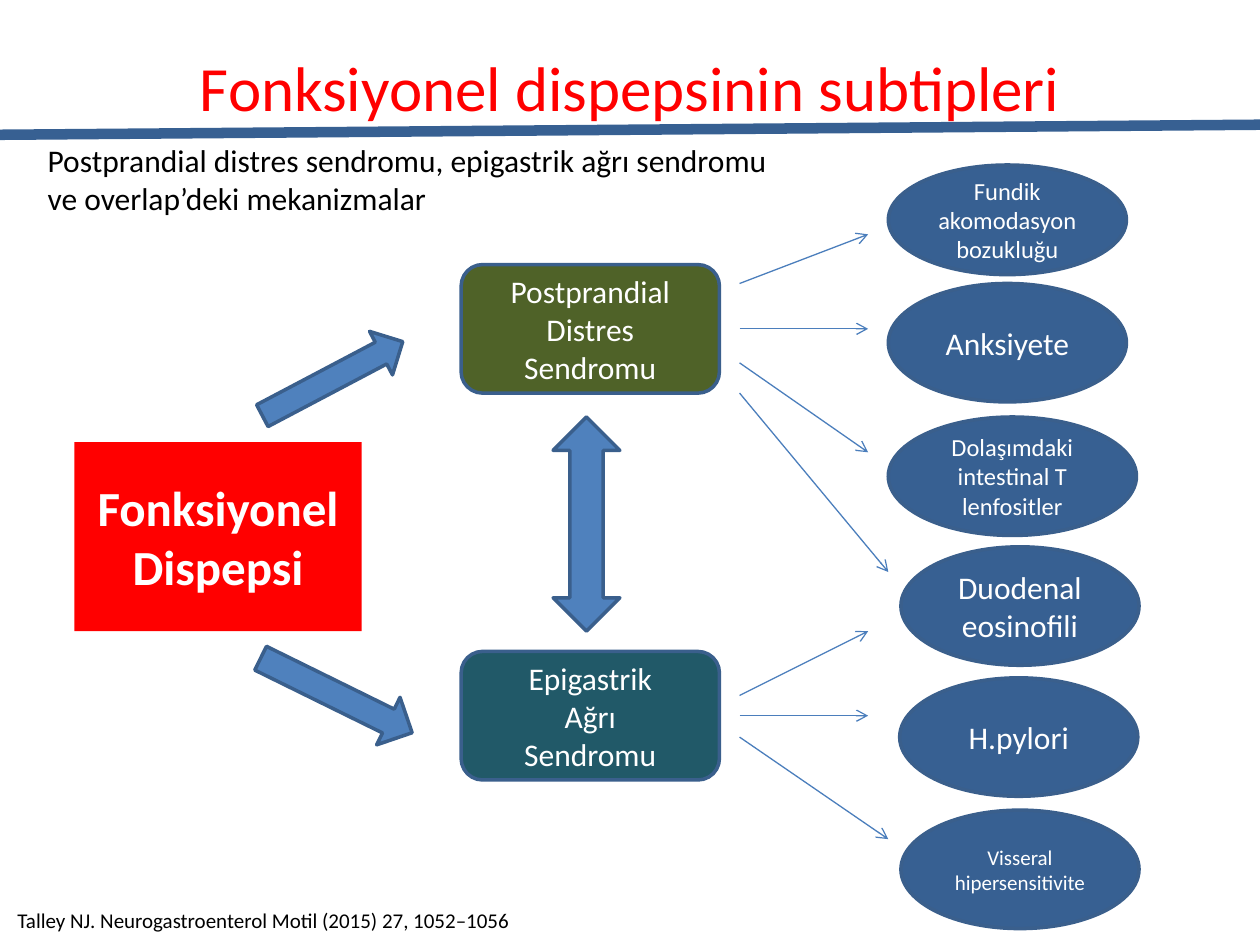
from dataclasses import dataclass

from lxml import etree
from pptx import Presentation
from pptx import util as u
from pptx.dml.color import RGBColor
from pptx.enum import shapes, text
from pptx.oxml import ns

Inches, Pt = u.Inches, u.Pt
Kind = shapes.MSO_SHAPE


@dataclass(frozen=True)
class Theme:
    font: str = "Calibri"
    red: str = "FF0000"
    black: str = "000000"
    white: str = "FFFFFF"
    navy: str = "376092"
    outline: str = "3A5F8C"
    arrow: str = "4F81BD"
    link: str = "4B7EBC"
    olive: str = "4F6228"
    teal: str = "215968"
    title: int = 36
    root: int = 28
    body: int = 18
    label: int = 14
    small: int = 12


THEME = Theme()


@dataclass(frozen=True)
class Box:
    left: float
    top: float
    width: float
    height: float

    def inner(self, x, y, width, height):
        """A box whose place is counted from this box's corner."""
        return Box(self.left + x, self.top + y, width, height)

    def lengths(self):
        return [Inches(n) for n in (self.left, self.top, self.width, self.height)]


def colour(value):
    return RGBColor.from_string(value)


def write(shape, lines, size, ink, align, bold=False):
    frame = shape.text_frame
    frame.text = "\n".join(lines)
    for para in frame.paragraphs:
        para.alignment = align
        para.font.name = THEME.font
        para.font.size = Pt(size)
        para.font.bold = bold
        para.font.color.rgb = colour(ink)


def add_text(page, box, lines, size, ink=THEME.black, align=text.PP_ALIGN.LEFT, wrap=False):
    shape = page.shapes.add_textbox(*box.lengths())
    shape.text_frame.word_wrap = wrap
    shape.text_frame.vertical_anchor = text.MSO_ANCHOR.MIDDLE if wrap else text.MSO_ANCHOR.TOP
    write(shape, lines, size, ink, align)


def add_block(page, kind, box, fill, lines=(), size=THEME.body, bold=False, outlined=True):
    shape = page.shapes.add_shape(kind, *box.lengths())
    shape.shadow.inherit = False
    shape.fill.solid()
    shape.fill.fore_color.rgb = colour(fill)
    if outlined:
        shape.line.color.rgb = colour(THEME.outline)
        shape.line.width = Pt(2)
    else:
        shape.line.fill.background()
    if lines:
        shape.text_frame.vertical_anchor = text.MSO_ANCHOR.MIDDLE
        write(shape, lines, size, THEME.white, text.PP_ALIGN.CENTER, bold)
    return shape


def add_line(page, start, end, ink, width, arrow=False):
    ends = [Inches(n) for n in (*start, *end)]
    line = page.shapes.add_connector(shapes.MSO_CONNECTOR.STRAIGHT, *ends)
    line.line.color.rgb = colour(ink)
    line.line.width = Pt(width)
    if arrow:
        etree.SubElement(line.line._get_or_add_ln(), ns.qn("a:tailEnd"), type="arrow")
    etree.SubElement(line._element.spPr, ns.qn("a:effectLst"))


def draw_header(page, box):
    add_text(page, box.inner(0.5, 0.3, 9, 0.77), ["Fonksiyonel dispepsinin subtipleri"],
             THEME.title, THEME.red, text.PP_ALIGN.CENTER, wrap=True)
    add_text(page, box.inner(0.28, 1.07, 6.03, 0.71),
             ["Postprandial distres sendromu, epigastrik ağrı sendromu",
              "ve overlap’deki mekanizmalar"], THEME.body)
    add_line(page, (box.left, box.top + 1.07), (box.left + box.width, box.top + 0.99),
             THEME.navy, 6)


def draw_diagnosis(page, box):
    add_block(page, Kind.RECTANGLE, box.inner(0, 0.7, box.width, 1.5), THEME.red,
              ["Fonksiyonel", "Dispepsi"], THEME.root, bold=True, outlined=False)
    # Block arrows towards the two syndromes
    for place, angle in (((1.42, 0, 1.26, 0.39), -27.8), ((1.41, 2.5, 1.34, 0.42), 26.2)):
        arrow = add_block(page, Kind.RIGHT_ARROW, box.inner(*place), THEME.arrow)
        arrow.rotation = angle


def draw_syndromes(page, box):
    height = 1.02
    syndromes = (
        (0, THEME.olive, ["Postprandial", "Distres", "Sendromu"]),
        (box.height - height, THEME.teal, ["Epigastrik", "Ağrı", "Sendromu"]),
    )
    for top, fill, lines in syndromes:
        add_block(page, Kind.ROUNDED_RECTANGLE, box.inner(0, top, box.width, height), fill, lines)
    add_block(page, Kind.UP_DOWN_ARROW, box.inner(0.73, 1.21, 0.53, 1.7), THEME.arrow)


def draw_mechanisms(page, box):
    # Left, top, width, height, type size, wording
    mechanisms = (
        (0, 0, 1.89, 0.87, THEME.label, ["Fundik", "akomodasyon", "bozukluğu"]),
        (0, 0.94, 1.89, 0.94, THEME.body, ["Anksiyete"]),
        (0, 2, 1.97, 0.94, THEME.label, ["Dolaşımdaki", "intestinal T lenfositler"]),
        (0.1, 3.03, 1.89, 0.94, THEME.body, ["Duodenal", "eosinofili"]),
        (0.09, 4.07, 1.89, 0.94, THEME.body, ["H.pylori"]),
        (0.1, 5.12, 1.89, 0.94, THEME.small, ["Visseral", "hipersensitivite"]),
    )
    for *place, size, lines in mechanisms:
        add_block(page, Kind.OVAL, box.inner(*place), THEME.navy, lines, size)


def draw_links(page, box):
    # Start height, end across, end height
    near, far = 1.02, box.width
    links = (
        (0.39, near, 0), (0.75, near, 0.75), (1.02, near, 1.73), (1.26, far, 2.68),
        (3.66, near, 3.15), (3.82, near, 3.82), (3.99, far, 4.8),
    )
    for start, across, end in links:
        add_line(page, (box.left, box.top + start), (box.left + across, box.top + end),
                 THEME.link, 0.75, arrow=True)


def draw_citation(page, box):
    add_text(page, box, ["Talley NJ. Neurogastroenterol Motil (2015) 27, 1052–1056"], THEME.small)


def main():
    deck = Presentation()
    deck.slide_width, deck.slide_height = Inches(10), Inches(7.5)
    page = deck.slides.add_slide(deck.slide_layouts[6])
    draw_header(page, Box(0, 0, 10, 1.78))
    draw_citation(page, Box(0.04, 7.15, 4.16, 0.3))
    draw_diagnosis(page, Box(0.59, 2.81, 2.28, 2.92))
    draw_syndromes(page, Box(3.66, 2.1, 2.05, 4.09))
    draw_mechanisms(page, Box(7.05, 1.31, 1.99, 6.06))
    draw_links(page, Box(5.87, 1.86, 1.18, 4.8))
    deck.save("out.pptx")


if __name__ == "__main__":
    main()
